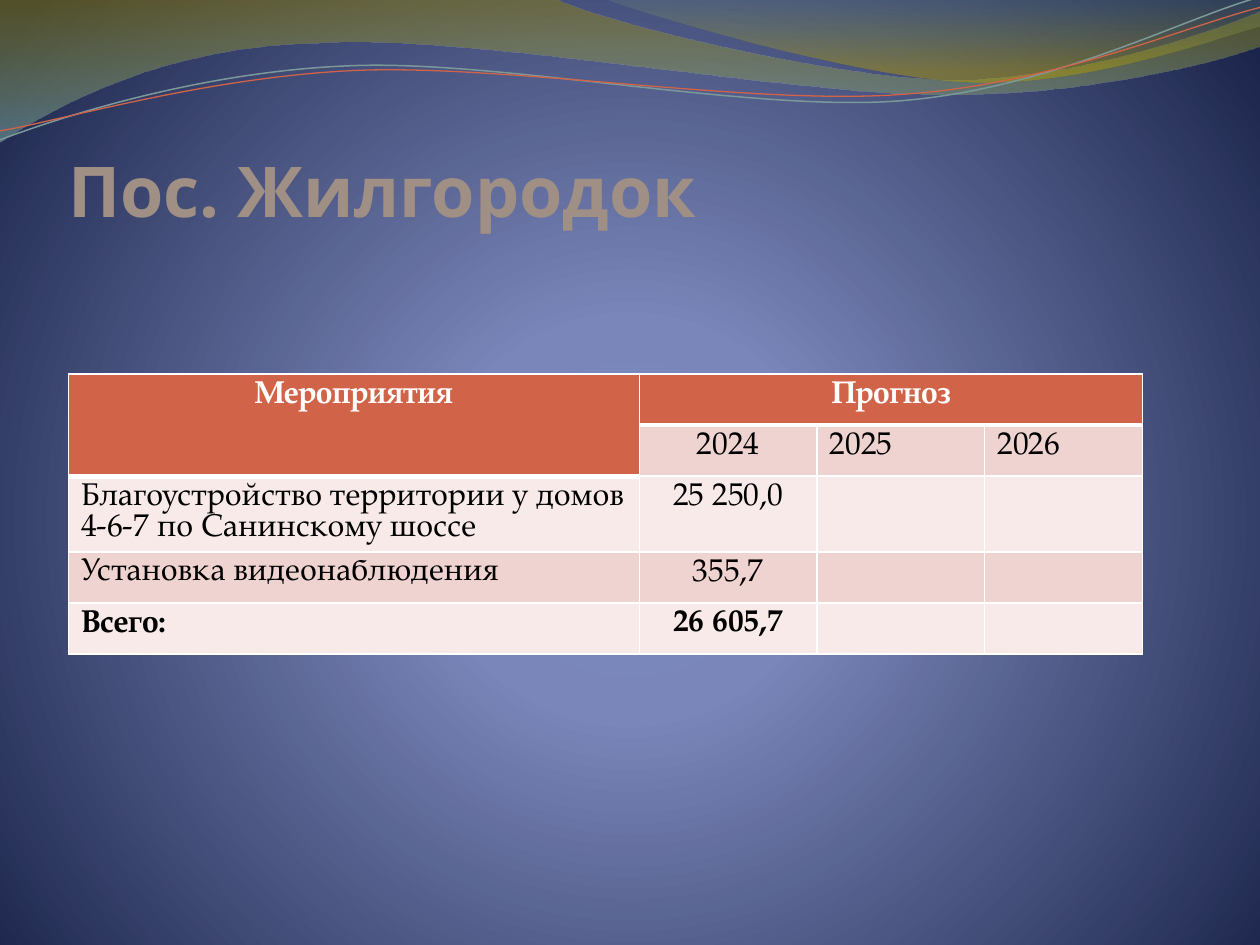
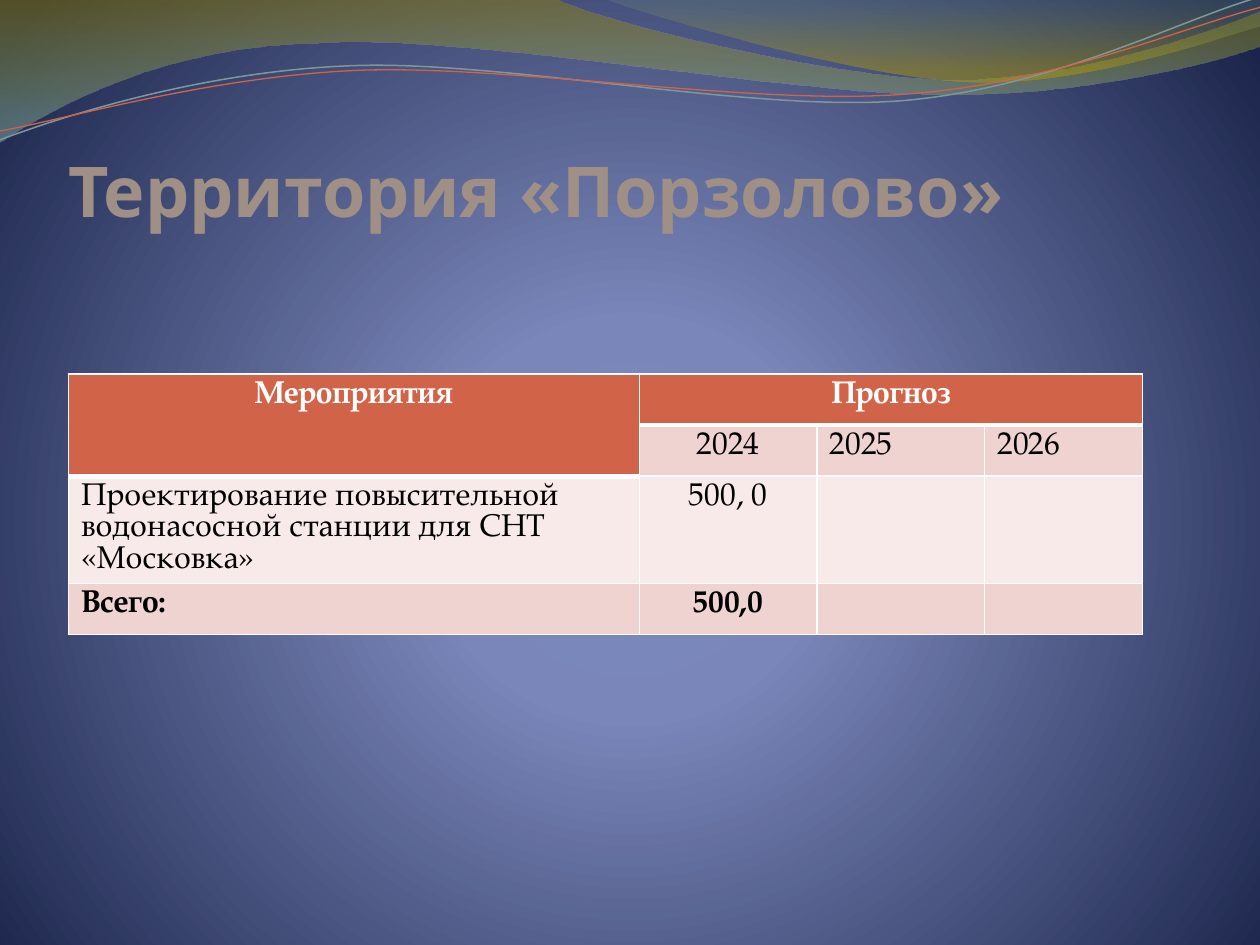
from typing import NamedTuple, Optional

from lxml import etree
from pptx import Presentation, util as u
from pptx.dml.color import RGBColor
from pptx.enum import text
from pptx.oxml.ns import qn

# Shared look
WHITE = RGBColor(0xFF, 0xFF, 0xFF)
BLACK = RGBColor(0x00, 0x00, 0x00)
TITLE_COLOR = RGBColor(0x9F, 0x8F, 0x85)
RUST = RGBColor(0xD1, 0x63, 0x49)
SAGE = RGBColor(0x7C, 0x99, 0x9A)
BAND_DARK = RGBColor(0xEE, 0xD3, 0xD0)
BAND_LIGHT = RGBColor(0xF7, 0xEA, 0xE9)
OLIVE = RGBColor(0x97, 0x85, 0x00)
TEAL = RGBColor(0x77, 0xA5, 0xA6)
DEEP_TEAL = RGBColor(0x64, 0x84, 0x84)
GOLD = RGBColor(0xB4, 0x9F, 0x00)
SKY = RGBColor(0x7A, 0x88, 0xC3)
SKY_MID = RGBColor(0x7A, 0x86, 0xB9)
NIGHT = RGBColor(0x1B, 0x25, 0x4B)

TITLE_FONT = "Noto Sans"
TABLE_FONT = "TeX Gyre Pagella"
TABLE_SIZE = 18
LEFT = u.Cm(1.38)
COLUMN_WIDTHS = (11.51, 3.58, 3.38, 3.18)
ROW_HEIGHT = 1.03
YEARS = ("2024", "2025", "2026")
CENTER = text.PP_ALIGN.CENTER
LINE_TILT = 357.3


class Stop(NamedTuple):
    percent: int
    color: RGBColor
    opacity: int = 100


class Wave(NamedTuple):
    """A segment of one point is straight, one of three points is a Bezier curve."""
    start: tuple
    segments: tuple
    stops: tuple = ()
    line: Optional[RGBColor] = None
    width: float = 0


class Plan(NamedTuple):
    title: str
    items: tuple
    total: str


WAVES = (
    Wave((0, 0), (
        ((11.18, -0.03),),
        ((12.09, 0.43), (16.87, 1.6), (19.25, 1.6)),
        ((21.67, 1.6), (24.33, 0.66), (25.4, 0.23)),
        ((25.43, 0.91),),
        ((24.97, 1.12), (22.1, 1.93), (18.95, 1.9)),
        ((15.8, 1.9), (9.7, 0.71), (6.53, 0.86)),
        ((3.28, 0.91), (1.17, 2.11), (-0.03, 2.87)),
    ), stops=(Stop(0, OLIVE, 45), Stop(100, TEAL, 55))),
    Wave((12.17, -0.03), (
        ((12.93, 0.28), (17.32, 1.57), (19.53, 1.65)),
        ((21.74, 1.75), (24.41, 0.81), (25.4, 0.53)),
        ((25.4, 0),),
    ), stops=(Stop(0, DEEP_TEAL, 30), Stop(80, GOLD, 45))),
    Wave((-0.05, 2.22), (
        ((1.19, 1.82), (4.02, 1.04), (7.05, 1.06)),
        ((10.05, 1.07), (15.02, 2.37), (18.08, 2.29)),
        ((21.13, 2.2), (23.86, 0.91), (25.41, 0.55)),
    ), line=SAGE, width=0.85),
    Wave((-0.04, 2.04), (
        ((1.16, 1.9), (4.17, 1.15), (7.2, 1.16)),
        ((10.25, 1.18), (15.13, 2.25), (18.19, 2.16)),
        ((21.21, 2.1), (23.93, 1.06), (25.45, 0.75)),
    ), line=RUST, width=0.75),
)

PLANS = (
    Plan("Пос. Жилгородок", (
        ("Благоустройство территории у домов 4-6-7 по Санинскому шоссе", "25 250,0"),
        ("Установка видеонаблюдения", "355,7"),
    ), "26 605,7"),
    Plan("Территория «Порзолово»", (
        ("Проектирование повысительной водонасосной станции для СНТ «Московка»", "500, 0"),
    ), "500,0"),
)


def add_color(parent, color: RGBColor, opacity: int = 100) -> None:
    clr = etree.SubElement(parent, qn("a:srgbClr"), val=str(color))
    if opacity < 100:
        etree.SubElement(clr, qn("a:alpha"), val=str(opacity * 1000))


def set_gradient(holder, stops: tuple, radial: bool = False) -> None:
    """Replace the solid fill of a properties element by a gradient."""
    grad = etree.Element(qn("a:gradFill"), rotWithShape="1")
    stop_list = etree.SubElement(grad, qn("a:gsLst"))
    for stop in stops:
        gs = etree.SubElement(stop_list, qn("a:gs"), pos=str(stop.percent * 1000))
        add_color(gs, stop.color, stop.opacity)
    if radial:
        shade = etree.SubElement(grad, qn("a:path"), {"path": "circle"})
        etree.SubElement(shade, qn("a:fillToRect"),
                         l="10000", t="110000", r="10000", b="100000")
    else:
        etree.SubElement(grad, qn("a:lin"), ang="5400000", scaled="0")
    holder.replace(holder.find(qn("a:solidFill")), grad)


def set_background(master) -> None:
    master.background.fill.solid()
    master.background.fill.fore_color.rgb = NIGHT
    bg = next(master.element.iter(qn("p:bgPr")))
    set_gradient(bg, (Stop(0, SKY), Stop(25, SKY_MID), Stop(100, NIGHT)), radial=True)


def bend(sp, segments: tuple) -> None:
    """Join the straight steps of each three-point segment into one Bezier curve."""
    steps = iter(list(sp.element.iter(qn("a:lnTo"))))
    for segment in segments:
        parts = [next(steps) for _ in segment]
        if len(parts) == 3:
            curve = etree.Element(qn("a:cubicBezTo"))
            parts[0].addprevious(curve)
            for part in parts:
                curve.append(part[0])
                part.getparent().remove(part)


def add_wave(s, wave: Wave) -> None:
    points = [(u.Cm(x), u.Cm(y)) for segment in wave.segments for x, y in segment]
    builder = s.shapes.build_freeform(*(u.Cm(c) for c in wave.start))
    builder.add_line_segments(points, close=bool(wave.stops))
    sp = builder.convert_to_shape()
    bend(sp, wave.segments)
    sp.shadow.inherit = False
    if wave.stops:
        sp.fill.solid()
        set_gradient(sp.element.spPr, wave.stops)
        sp.line.fill.background()
    else:
        sp.rotation = LINE_TILT
        sp.fill.background()
        sp.line.color.rgb = wave.line
        sp.line.width = u.Pt(wave.width)


def add_run(p, words: str, font: str, size: int, color: RGBColor, bold: bool) -> None:
    r = p.add_run()
    r.text = words
    r.font.name = font
    r.font.size = u.Pt(size)
    r.font.color.rgb = color
    r.font.bold = bold


def add_title(s, words: str) -> None:
    tf = s.shapes.add_textbox(LEFT, u.Cm(1.98), u.Cm(21.59), u.Cm(2.69)).text_frame
    tf.word_wrap = True
    tf.vertical_anchor = text.MSO_ANCHOR.BOTTOM
    tf.margin_left = tf.margin_top = tf.margin_right = tf.margin_bottom = 0
    add_run(tf.paragraphs[0], words, TITLE_FONT, 40, TITLE_COLOR, True)


def is_header(row: int, col: int) -> bool:
    return row == 0 or (row == 1 and col == 0)


def set_borders(cell, row: int, col: int) -> None:
    top = 3 if row and is_header(row - 1, col) else 1
    bottom = 3 if is_header(row, col) else 1
    tc_pr = cell._tc.get_or_add_tcPr()
    for i, (side, width) in enumerate((("L", 1), ("R", 1), ("T", top), ("B", bottom))):
        ln = etree.Element(qn(f"a:ln{side}"), w=str(u.Pt(width)))
        add_color(etree.SubElement(ln, qn("a:solidFill")), WHITE)
        tc_pr.insert(i, ln)


def add_plan_table(s, plan: Plan) -> None:
    rows = [("Мероприятия", "Прогноз"), ("", *YEARS), *plan.items, ("Всего:", plan.total)]
    table = s.shapes.add_table(len(rows), len(COLUMN_WIDTHS), LEFT, u.Cm(7.54),
                               u.Cm(sum(COLUMN_WIDTHS)), u.Cm(ROW_HEIGHT * len(rows))).table
    table.first_row = table.horz_banding = False
    for column, width in zip(table.columns, COLUMN_WIDTHS):
        column.width = u.Cm(width)

    for i, row in enumerate(rows):
        table.rows[i].height = u.Cm(ROW_HEIGHT)
        for j in range(len(COLUMN_WIDTHS)):
            cell = table.cell(i, j)
            header = is_header(i, j)
            cell.fill.solid()
            cell.fill.fore_color.rgb = RUST if header else BAND_DARK if i % 2 else BAND_LIGHT
            set_borders(cell, i, j)
            if j < len(row) and row[j]:
                p = cell.text_frame.paragraphs[0]
                if header or j == 1:
                    p.alignment = CENTER
                elif j == 0:
                    p.line_spacing = u.Pt(TABLE_SIZE)
                add_run(p, row[j], TABLE_FONT, TABLE_SIZE, WHITE if header else BLACK,
                        header or i == len(rows) - 1)

    table.cell(0, 0).merge(table.cell(1, 0))
    table.cell(0, 1).merge(table.cell(0, 3))


def main() -> None:
    prs = Presentation()
    prs.slide_width, prs.slide_height = u.Cm(25.4), u.Cm(19.05)
    set_background(prs.slide_master)
    for plan in PLANS:
        s = prs.slides.add_slide(prs.slide_layouts[6])
        for wave in WAVES:
            add_wave(s, wave)
        add_title(s, plan.title)
        add_plan_table(s, plan)
    prs.save("out.pptx")


if __name__ == "__main__":
    main()
